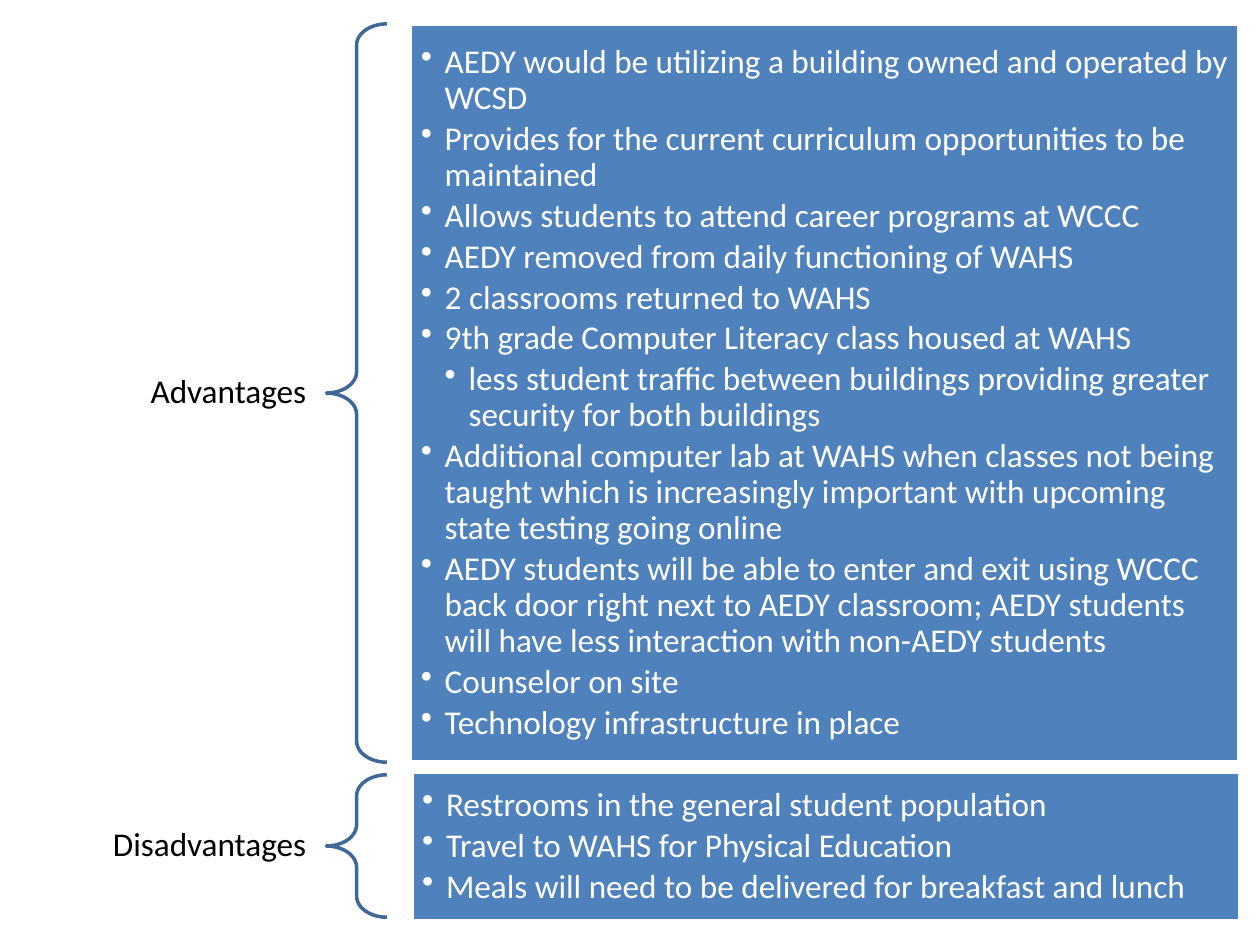
from lxml.etree import SubElement
from pptx import Presentation
from pptx.dml.color import RGBColor
from pptx.enum.shapes import MSO_SHAPE as Shape
from pptx.enum.text import MSO_ANCHOR as Anchor, PP_ALIGN as Align
from pptx.oxml.ns import qn
from pptx.util import Inches, Pt

COLORS = {"panel": "4F81BD", "brace": "3F6797", "label": "000000", "white": "FFFFFF"}
INDENT = 0.19
LABEL_HEIGHT = 0.41

# Each section: label, brace top and height, panel left, top and height,
# and its points as (level, text)
SECTIONS = [
    ("Advantages", (0.19, 5.86), (3.26, 0.19, 5.86), [
        (1, "AEDY would be utilizing a building owned and operated by WCSD"),
        (1, "Provides for the current curriculum opportunities to be maintained"),
        (1, "Allows students to attend career programs at WCCC"),
        (1, "AEDY removed from daily functioning of WAHS"),
        (1, "2 classrooms returned to WAHS"),
        (1, "9th grade Computer Literacy class housed at WAHS"),
        (2, "less student traffic between buildings providing greater "
            "security for both buildings"),
        (1, "Additional computer lab at WAHS when classes not being taught which is "
            "increasingly important with upcoming state testing going online"),
        (1, "AEDY students will be able to enter and exit using WCCC back door right "
            "next to AEDY classroom; AEDY students will have less interaction with "
            "non-AEDY students"),
        (1, "Counselor on site"),
        (1, "Technology infrastructure in place"),
    ]),
    ("Disadvantages", (6.15, 1.13), (3.27, 6.13, 1.18), [
        (1, "Restrooms in the general student population"),
        (1, "Travel to WAHS for Physical Education"),
        (1, "Meals will need to be delivered for breakfast and lunch"),
    ]),
]


def prepare_frame(box, side, edge):
    """Wrap and centre the text vertically, with side and top/bottom insets."""
    frame = box.text_frame
    frame.word_wrap = True
    frame.vertical_anchor = Anchor.MIDDLE
    frame.margin_left = frame.margin_right = Inches(side)
    frame.margin_top = frame.margin_bottom = Inches(edge)
    return frame


def write_para(para, text, color, align, space_after):
    para.alignment = align
    para.line_spacing = 0.9
    para.space_after = Pt(space_after)
    span = para.add_run()
    span.text = text
    span.font.name = "Calibri"
    span.font.size = Pt(19)
    span.font.color.rgb = RGBColor.from_string(COLORS[color])


deck = Presentation()
deck.slide_width, deck.slide_height = Inches(10), Inches(7.5)
page = deck.slides.add_slide(deck.slide_layouts[6])

for title, (brace_top, brace_height), (left, top, height), points in SECTIONS:
    middle = brace_top + brace_height / 2
    label = page.shapes.add_textbox(
        Inches(0.17), Inches(middle - LABEL_HEIGHT / 2), Inches(2.41), Inches(LABEL_HEIGHT))
    frame = prepare_frame(label, 0.15, 0.05)
    write_para(frame.paragraphs[0], title, "label", Align.RIGHT, 6.65)

    brace = page.shapes.add_shape(
        Shape.LEFT_BRACE, Inches(2.59), Inches(brace_top), Inches(0.48), Inches(brace_height))
    brace.adjustments[0] = 0.35
    brace.adjustments[1] = 0.5
    brace.fill.background()

    panel = page.shapes.add_shape(
        Shape.RECTANGLE, Inches(left), Inches(top), Inches(6.57), Inches(height))
    panel.fill.solid()
    panel.fill.fore_color.rgb = RGBColor.from_string(COLORS["panel"])

    for shape, line_color in ((brace, "brace"), (panel, "white")):
        shape.shadow.inherit = False
        shape.line.color.rgb = RGBColor.from_string(COLORS[line_color])
        shape.line.width = Pt(2)

    frame = prepare_frame(panel, 0.08, 0.08)
    for index, (level, text) in enumerate(points):
        para = frame.add_paragraph() if index else frame.paragraphs[0]
        para.level = level
        write_para(para, text, "white", Align.LEFT, 2.85)
        properties = para._p.get_or_add_pPr()
        properties.set("marL", str(Inches(INDENT * level)))
        properties.set("indent", str(Inches(-INDENT)))
        SubElement(properties, qn("a:buChar")).set("char", "•")

deck.save("out.pptx")
